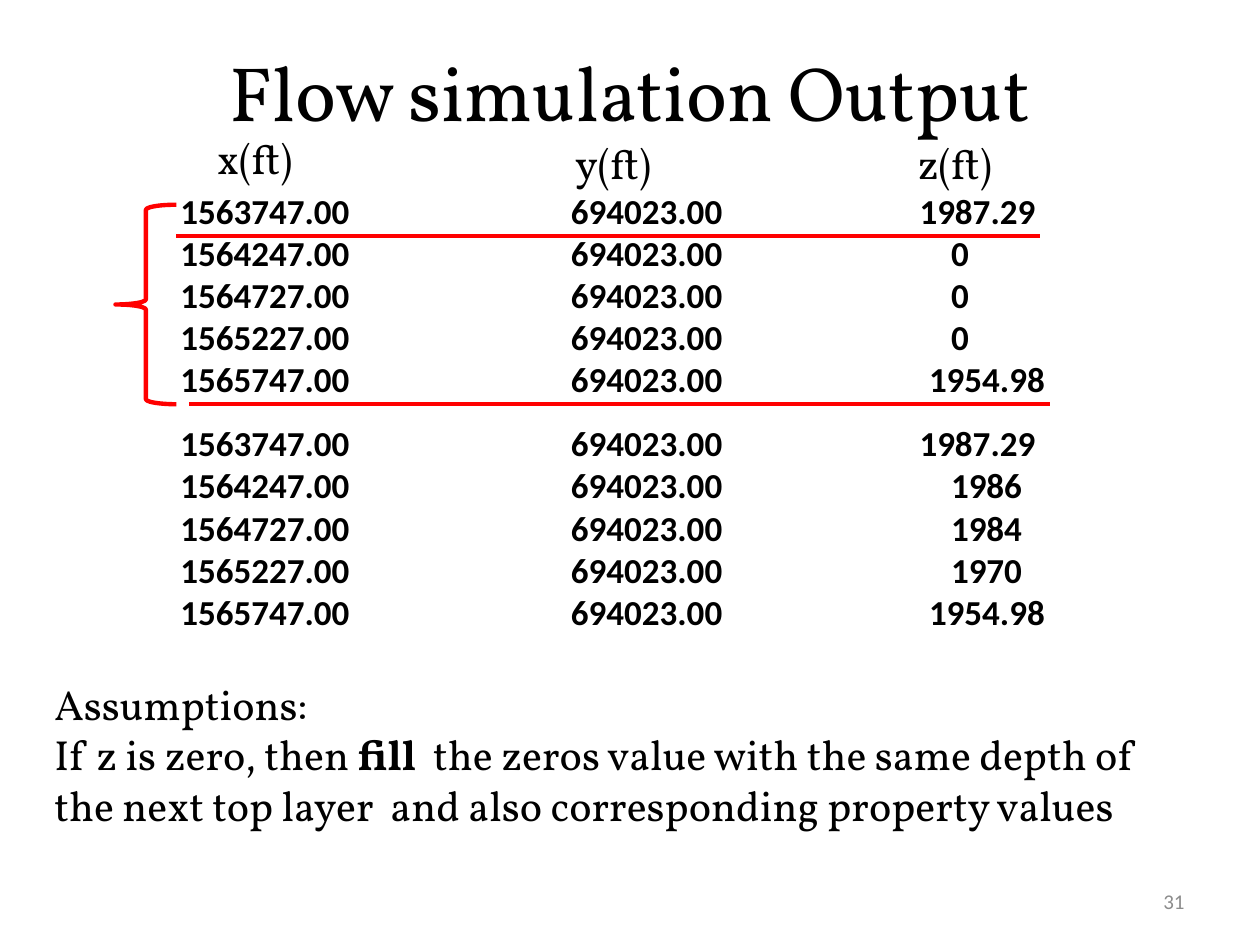
from pptx import Presentation
from pptx.dml.color import RGBColor
from pptx.enum.shapes import MSO_CONNECTOR, MSO_SHAPE
from pptx.enum.text import MSO_ANCHOR as Anchor, PP_ALIGN as Align
from pptx.util import Inches, Pt
from lxml.etree import SubElement
from pptx.oxml.ns import qn

COLORS = {name: RGBColor.from_string(value) for name, value in
          {"text": "000000", "number": "8C8C8C", "mark": "FF0000"}.items()}

deck = Presentation()
deck.slide_width, deck.slide_height = Inches(10), Inches(7.5)
slide = deck.slides.add_slide(deck.slide_layouts[5])
shapes = slide.shapes
cell = deck.slide_width // 120  # grid of 120 columns and 90 rows


def grid(*cells):
    return [round(n * cell) for n in cells]


def write(text, box, target=None, size=24, font="Vollkorn", color="text",
          bold=False, align=Align.LEFT, anchor=Anchor.TOP, tabs=None):
    """Lines split at newlines; ** switches bold; tabs holds stops per line."""
    area = target or shapes.add_textbox(*grid(*box))
    area.left, area.top, area.width, area.height = grid(*box)
    frame = area.text_frame
    frame.word_wrap = True
    frame.vertical_anchor = anchor
    for i, line in enumerate(text.split("\n")):
        para = frame.add_paragraph() if i else frame.paragraphs[0]
        para.alignment = align
        for part, words in enumerate(line.split("**")):
            run = para.add_run()
            run.text = words
            run.font.name, run.font.size = font, Pt(size)
            run.font.bold = bold or part % 2 == 1
            run.font.color.rgb = COLORS[color]
        if tabs:
            stops = SubElement(para._p.get_or_add_pPr(), qn("a:tabLst"))
            for stop in grid(*tabs[i]):
                SubElement(stops, qn("a:tab"), pos=str(stop), algn="l")


# Title, page number and assumptions
write("Flow simulation Output", (6, 3.6, 108, 15), target=shapes.title,
      size=44, align=Align.CENTER)
write("31", (86, 83.4, 28, 4.8), size=12, font="Calibri", color="number",
      align=Align.RIGHT, anchor=Anchor.MIDDLE)
write("Assumptions:\nIf z is zero, then **fill  **the zeros value with the same "
      "depth of the next top layer  and also corresponding property values",
      (4, 64, 109, 15.7))

# Column headings
for heading, left, top in (("x(ft)", 19.5, 12), ("y(ft)", 53.6, 12.5),
                           ("z(ft)", 86.2, 12.5)):
    write(heading, (left, top, 12.8, 6))

# Coordinates before and after the zeros are filled
x_values = [1563747, 1564247, 1564727, 1565227, 1565747]
z_stops = [70.4, 73.4, 73.4, 73.4, 71.3]
for top, z_values in ((17.5, ["1987.29", "0", "0", "0", "1954.98"]),
                      (39.6, ["1987.29", "1986", "1984", "1970", "1954.98"])):
    rows = [f"{x:.2f}\t694023.00\t{z}" for x, z in zip(x_values, z_values)]
    write("\n".join(rows), (16, top, 85, 25.4), size=20, font="Calibri",
          bold=True, tabs=[(37.2, stop) for stop in z_stops])

# Red rules under the first and last known depths
for left, right, row in ((16.8, 99, 22.5), (18, 100, 38.5)):
    rule = shapes.add_connector(MSO_CONNECTOR.STRAIGHT, *grid(left, row, right, row))
    rule.line.color.rgb, rule.line.width = COLORS["mark"], Pt(2)
    SubElement(rule._element.spPr, qn("a:effectLst"))

# Brace around the rows to fill
brace = shapes.add_shape(MSO_SHAPE.LEFT_BRACE, *grid(11, 19.5, 5.8, 19))
brace.shadow.inherit = False
brace.fill.background()
brace.line.color.rgb, brace.line.width = COLORS["mark"], Pt(2.5)

deck.save("out.pptx")
